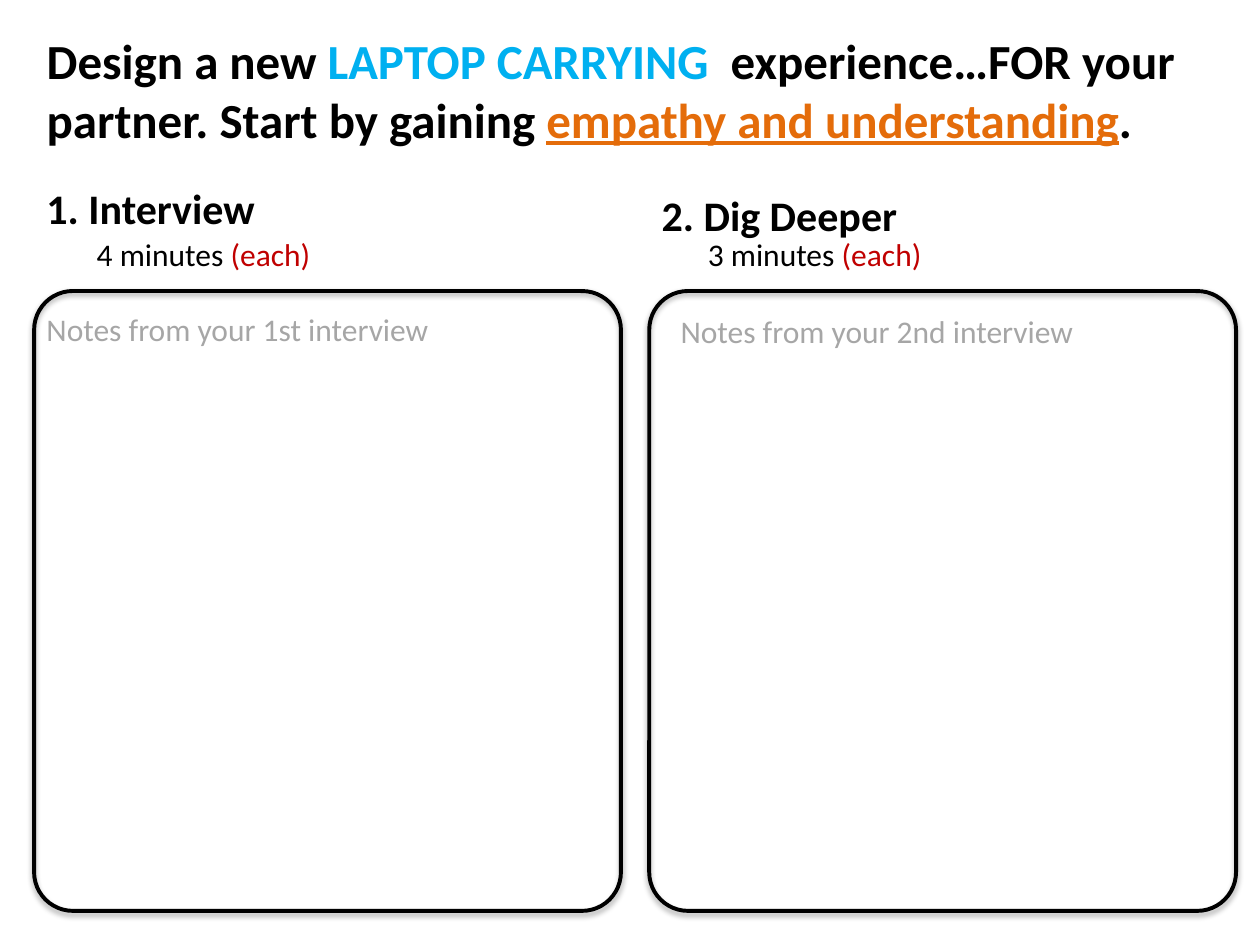
from lxml import etree
from pptx import Presentation
from pptx.dml.color import RGBColor
from pptx.enum import shapes, text
from pptx.oxml import parse_xml
from pptx.oxml.ns import nsdecls
from pptx.util import Pt

BLACK = RGBColor(0x00, 0x00, 0x00)
GRAY = RGBColor(0xA6, 0xA6, 0xA6)
RED = RGBColor(0xC0, 0x00, 0x00)
BLUE = RGBColor(0x00, 0xB0, 0xF0)
ORANGE = RGBColor(0xE4, 0x6C, 0x0A)

SHADOW = (
    f'<a:effectLst {nsdecls("a")}>'
    '<a:outerShdw blurRad="39370" dist="22860" dir="5400000" rotWithShape="0">'
    '<a:srgbClr val="000000"><a:alpha val="35000"/></a:srgbClr>'
    '</a:outerShdw></a:effectLst>'
)


def add_runs(p, parts, size, bold=False):
    for words, color in parts:
        r = p.add_run()
        r.text = words
        r.font.name = "Calibri"
        r.font.size = Pt(size)
        r.font.bold = bold
        r.font.color.rgb = color


def add_text(left, top, width, height, parts, size, bold=False, wrap=True):
    sp = s.shapes.add_textbox(Pt(left), Pt(top), Pt(width), Pt(height))
    tf = sp.text_frame
    tf.word_wrap = wrap
    tf.auto_size = text.MSO_AUTO_SIZE.SHAPE_TO_FIT_TEXT
    add_runs(tf.paragraphs[0], parts, size, bold)


prs = Presentation()
prs.slide_width, prs.slide_height = Pt(720), Pt(540)
s = prs.slides.add_slide(prs.slide_layouts[5])

# Title
title = s.shapes.title
title.left, title.top, title.width, title.height = Pt(19.5), Pt(13.7), Pt(700.5), Pt(75)
tf = title.text_frame
tf.vertical_anchor = text.MSO_ANCHOR.TOP
tf.auto_size = text.MSO_AUTO_SIZE.NONE
p = tf.paragraphs[0]
p.alignment = text.PP_ALIGN.LEFT
add_runs(p, [
    ("Design a new ", BLACK),
    ("LAPTOP CARRYING ", BLUE),
    (" experience…FOR your partner. Start by gaining ", BLACK),
    ("empathy and understanding", ORANGE),
    (".", BLACK),
], 28, bold=True)
p.runs[3].font.underline = True

# Interview columns: left, heading and its top, minutes and their left,
# note and its left, top and width
columns = [
    (19.5, "1. Interview", 100.8, "4 minutes ", 48.2,
     "Notes from your 1st interview", 19.5, 173.5, 236),
    (371, "2. Dig Deeper", 104.6, "3 minutes ", 397.4,
     "Notes from your 2nd interview", 381.8, 174.8, 242),
]
for (left, heading, heading_top, minutes, minutes_left,
     note, note_left, note_top, note_width) in columns:
    # Notes panel
    sp = s.shapes.add_shape(shapes.MSO_SHAPE.ROUNDED_RECTANGLE,
                            Pt(left), Pt(166.3), Pt(335.3), Pt(354.2))
    sp.adjustments[0] = 0.066
    sp.fill.background()
    sp.line.color.rgb = BLACK
    sp.line.width = Pt(2.25)
    sp._element.spPr.append(parse_xml(SHADOW))

    # Prompt, heading and time
    add_text(note_left, note_top, note_width, 29, [(note, GRAY)], 18, wrap=False)
    add_text(left, heading_top, 155.5, 36, [(heading, BLACK)], 24, bold=True)
    add_text(minutes_left, 131, 322.5, 29,
             [(minutes, BLACK), ("(each)", RED)], 18)

prs.save("out.pptx")
